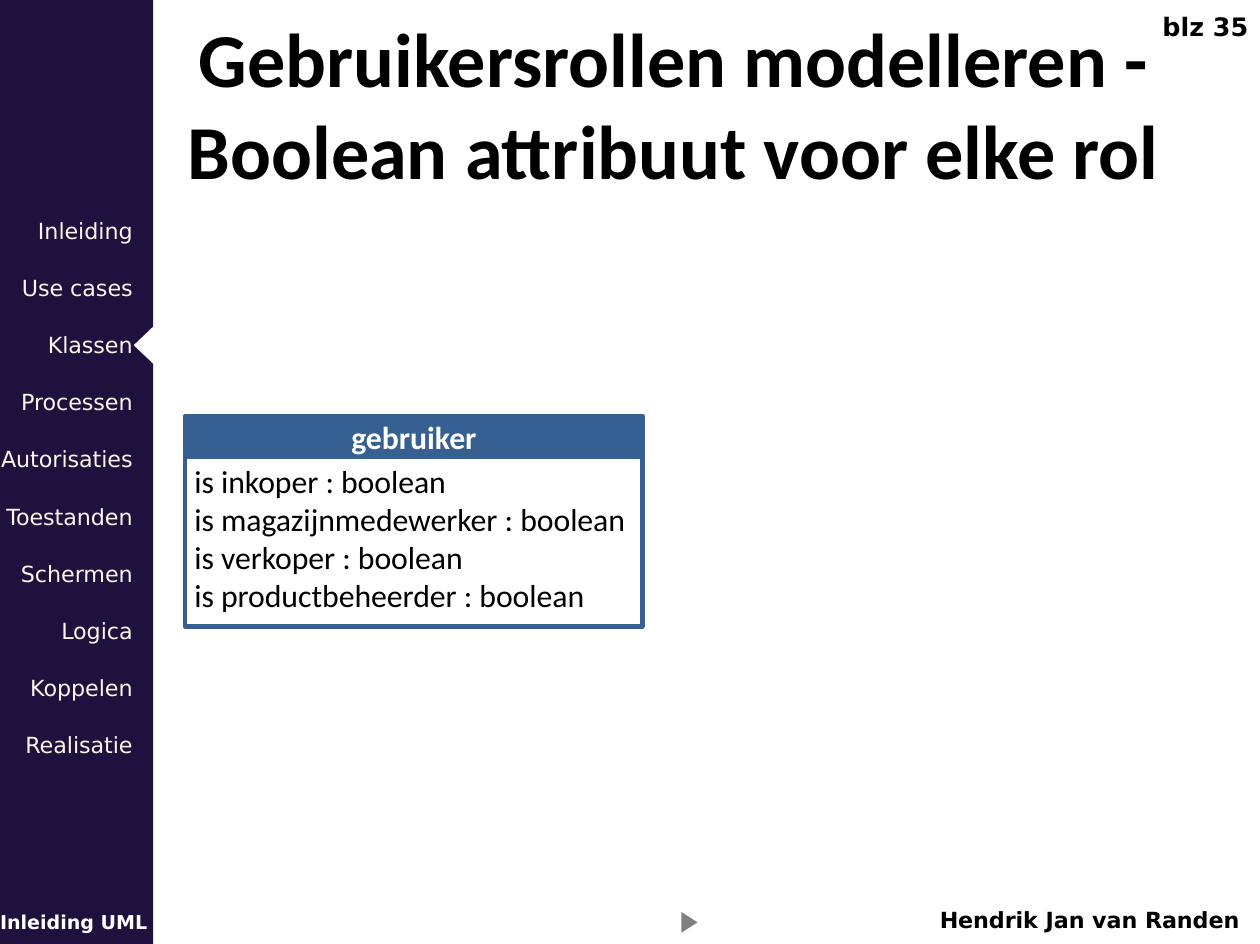
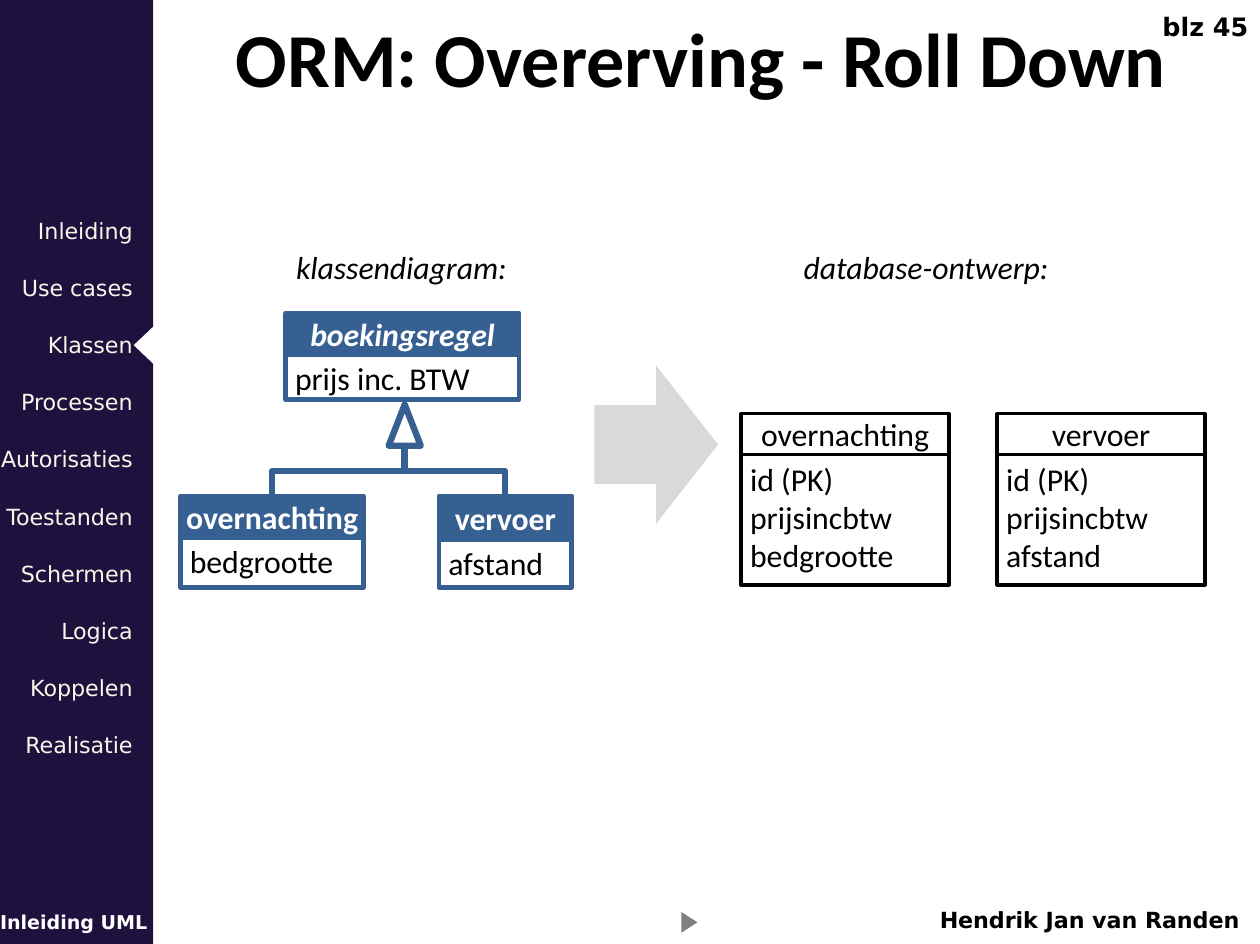
"""Builds two UML course slides with a shared navigation band."""
from dataclasses import dataclass

from pptx import Presentation
from pptx.dml.color import RGBColor
from pptx.enum.shapes import MSO_CONNECTOR, MSO_SHAPE
from pptx.enum.text import MSO_ANCHOR, MSO_AUTO_SIZE, PP_ALIGN
from pptx.oxml.ns import qn
from pptx.oxml.xmlchemy import OxmlElement
from pptx.util import Pt

PX = 9144
RECT, TRIANGLE = MSO_SHAPE.RECTANGLE, MSO_SHAPE.ISOSCELES_TRIANGLE
ARROW, ELBOW = MSO_SHAPE.RIGHT_ARROW, MSO_CONNECTOR.ELBOW
LEFT, CENTER, RIGHT = PP_ALIGN.LEFT, PP_ALIGN.CENTER, PP_ALIGN.RIGHT
TOP, MIDDLE = MSO_ANCHOR.TOP, MSO_ANCHOR.MIDDLE
NO_FIT = MSO_AUTO_SIZE.NONE

NAVY = RGBColor(0x1E, 0x11, 0x3E)
CREAM = RGBColor(0xFB, 0xF5, 0xEA)
BLUE = RGBColor(0x37, 0x60, 0x92)
WHITE = RGBColor(0xFF, 0xFF, 0xFF)
BLACK = RGBColor(0x00, 0x00, 0x00)
GRAY = RGBColor(0x80, 0x80, 0x80)
SILVER = RGBColor(0xD9, 0xD9, 0xD9)

BODY_FONT, FRAME_FONT = "Calibri", "DejaVu Sans"
MENU = ("Inleiding", "Use cases", "Klassen", "Processen", "Autorisaties",
        "Toestanden", "Schermen", "Logica", "Koppelen", "Realisatie")
MENU_TOP, MENU_STEP = 95, 25

Box = tuple[int, int, int, int]


@dataclass(frozen=True)
class TextStyle:
    font: str
    size: int
    color: RGBColor
    bold: bool = False
    italic: bool = False
    align: PP_ALIGN = LEFT
    anchor: MSO_ANCHOR = TOP
    inset: Box = (0, 0, 0, 0)
    wrap: bool = True


@dataclass(frozen=True)
class BoxStyle:
    head_fill: RGBColor
    line: RGBColor
    weight: float
    head: TextStyle


@dataclass(frozen=True)
class ClassBox:
    name: str
    fields: tuple[str, ...]
    box: Box
    style: BoxStyle
    head_height: int = 18


TITLE = TextStyle(BODY_FONT, 24, BLACK, bold=True, align=CENTER, inset=(10, 5, 10, 5))
TITLE_FLUSH = TextStyle(BODY_FONT, 24, BLACK, bold=True, align=CENTER, inset=(10, 5, 0, 5))
MENU_ITEM = TextStyle(FRAME_FONT, 7, CREAM, align=RIGHT)
AUTHOR = TextStyle(FRAME_FONT, 7, BLACK, bold=True, align=RIGHT, anchor=MIDDLE,
                   inset=(0, 5, 0, 5), wrap=False)
COURSE = TextStyle(FRAME_FONT, 6, WHITE, bold=True, anchor=MIDDLE,
                   inset=(0, 5, 0, 5), wrap=False)
PAGE = TextStyle(FRAME_FONT, 8, BLACK, bold=True, align=RIGHT,
                 inset=(10, 5, 6, 5), wrap=False)
CAPTION = TextStyle(BODY_FONT, 10, BLACK, italic=True, align=CENTER, anchor=MIDDLE,
                    inset=(10, 0, 10, 5))
FIELDS = TextStyle(BODY_FONT, 10, BLACK, inset=(4, 2, 0, 0), wrap=False)
CLASS_HEAD = TextStyle(BODY_FONT, 10, WHITE, bold=True, align=CENTER, anchor=MIDDLE)
ABSTRACT_HEAD = TextStyle(BODY_FONT, 10, WHITE, bold=True, italic=True, align=CENTER,
                          anchor=MIDDLE)
TABLE_HEAD = TextStyle(BODY_FONT, 10, BLACK, align=CENTER, anchor=MIDDLE)

CLASS = BoxStyle(BLUE, BLUE, 1.5, CLASS_HEAD)
ABSTRACT = BoxStyle(BLUE, BLUE, 1.5, ABSTRACT_HEAD)
TABLE = BoxStyle(WHITE, BLACK, 1, TABLE_HEAD)

USER_CLASS = ClassBox(
    "gebruiker",
    ("is inkoper : boolean", "is magazijnmedewerker : boolean",
     "is verkoper : boolean", "is productbeheerder : boolean"),
    (81, 182, 200, 92), CLASS)
BOOKING_BOXES = (
    ClassBox("overnachting", ("id (PK)", "prijsincbtw", "bedgrootte"),
             (324, 181, 91, 75), TABLE),
    ClassBox("vervoer", ("id (PK)", "prijsincbtw", "afstand"),
             (436, 181, 91, 75), TABLE),
    ClassBox("overnachting", ("bedgrootte",), (79, 217, 80, 40), CLASS),
    ClassBox("vervoer", ("afstand",), (192, 217, 58, 40), CLASS, 19),
    ClassBox("boekingsregel", ("prijs inc. BTW",), (125, 137, 102, 38), ABSTRACT),
)


def scaled(*lengths: float) -> list[int]:
    """Turn px lengths into EMU."""
    return [round(n * PX) for n in lengths]


def set_attrs(obj, values: dict) -> None:
    """Set every named attribute on an object."""
    for name, value in values.items():
        setattr(obj, name, value)


def write(sp, lines: tuple[str, ...], style: TextStyle) -> None:
    """Fill a shape with one styled paragraph per line."""
    tf = sp.text_frame
    left, top, right, bottom = scaled(*style.inset)
    set_attrs(tf, {"auto_size": NO_FIT, "word_wrap": style.wrap,
                   "vertical_anchor": style.anchor, "margin_left": left,
                   "margin_top": top, "margin_right": right, "margin_bottom": bottom})
    for i, line in enumerate(lines):
        p = tf.add_paragraph() if i else tf.paragraphs[0]
        p.alignment = style.align
        r = p.add_run()
        r.text = line
        set_attrs(r.font, {"name": style.font, "size": Pt(style.size),
                           "bold": style.bold, "italic": style.italic})
        r.font.color.rgb = style.color


def add_text(s, box: Box, text: str, style: TextStyle) -> None:
    """Add a text box with one line of text."""
    write(s.shapes.add_textbox(*scaled(*box)), (text,), style)


def add_shape(s, kind: MSO_SHAPE, box: Box, fill: RGBColor | None = None,
              line: RGBColor | None = None, weight: float = 1, rotation: int = 0):
    """Add a flat preset shape; a missing colour means no fill or no line."""
    sp = s.shapes.add_shape(kind, *scaled(*box))
    sp.shadow.inherit = False
    sp.rotation = rotation
    if fill is None:
        sp.fill.background()
    else:
        sp.fill.solid()
        sp.fill.fore_color.rgb = fill
    if line is None:
        sp.line.fill.background()
    else:
        sp.line.color.rgb = line
        sp.line.width = Pt(weight)
    return sp


def add_class_box(s, item: ClassBox) -> None:
    """Draw a name bar above a box of fields."""
    left, top, width, height = item.box
    style, head = item.style, item.head_height
    body = add_shape(s, RECT, (left, top + head, width, height - head),
                     WHITE, style.line, style.weight)
    write(body, item.fields, FIELDS)
    bar = add_shape(s, RECT, (left, top, width, head),
                    style.head_fill, style.line, style.weight)
    write(bar, (item.name,), style.head)


def add_branch(s, x1: int, y1: int, x2: int, y2: int) -> None:
    """Draw an elbow that leaves downward, as a turned horizontal elbow."""
    cx, cy = (x1 + x2) / 2, (y1 + y2) / 2
    goes_left = x2 < x1
    reach = (y2 - y1) / 2 * (1 if goes_left else -1)
    drop = abs(x2 - x1) / 2
    c = s.shapes.add_connector(
        ELBOW, *scaled(cx - reach, cy - drop, cx + reach, cy + drop))
    c.line.color.rgb = BLUE
    c.line.width = Pt(2)
    spPr = c._element.spPr
    spPr.find(qn("a:xfrm")).set("rot", str((90 if goes_left else 270) * 60000))
    spPr.append(OxmlElement("a:effectLst"))


def add_slide(prs, title: tuple[str, ...], box: Box, style: TextStyle, page: str):
    """Add a slide with its title and the shared frame."""
    s = prs.slides.add_slide(prs.slide_layouts[5])
    left, top, width, height = scaled(*box)
    set_attrs(s.shapes.title, {"left": left, "top": top, "width": width, "height": height})
    write(s.shapes.title, title, style)
    add_shape(s, RECT, (0, 0, 67, 413), NAVY)
    add_text(s, (346, 392, 196, 21), "Hendrik Jan van Randen", AUTHOR)
    add_text(s, (0, 393, 72, 21), "Inleiding UML", COURSE)
    for i, entry in enumerate(MENU):
        add_text(s, (-3, MENU_TOP + i * MENU_STEP, 61, 21), entry, MENU_ITEM)
    add_shape(s, TRIANGLE, (54, 146, 19, 10), WHITE, rotation=270)
    add_shape(s, TRIANGLE, (297, 400, 9, 7), GRAY, rotation=90)
    add_text(s, (497, 0, 55, 24), page, PAGE)
    return s


def build_roles(prs) -> None:
    """Build the slide on user roles."""
    s = add_slide(prs, ("Gebruikersrollen modelleren -", "Boolean attribuut voor elke rol"),
                  (67, 0, 445, 56), TITLE_FLUSH, "blz 35")
    add_class_box(s, USER_CLASS)


def build_roll_down(prs) -> None:
    """Build the slide on mapping inheritance to tables."""
    s = add_slide(prs, ("ORM: Overerving - Roll Down",), (66, 0, 481, 56), TITLE, "blz 45")
    add_text(s, (107, 110, 137, 18), "klassendiagram:", CAPTION)
    add_text(s, (307, 110, 196, 18), "database-ontwerp:", CAPTION)
    add_shape(s, ARROW, (260, 160, 54, 69), SILVER)
    add_shape(s, TRIANGLE, (170, 177, 14, 18), line=BLUE, weight=2)
    for x in (119, 221):
        add_branch(s, 177, 195, x, 217)
    for item in BOOKING_BOXES:
        add_class_box(s, item)


def main() -> None:
    """Build and save the presentation."""
    prs = Presentation()
    width, height = scaled(551, 413)
    set_attrs(prs, {"slide_width": width, "slide_height": height})
    build_roles(prs)
    build_roll_down(prs)
    prs.save("out.pptx")


if __name__ == "__main__":
    main()
